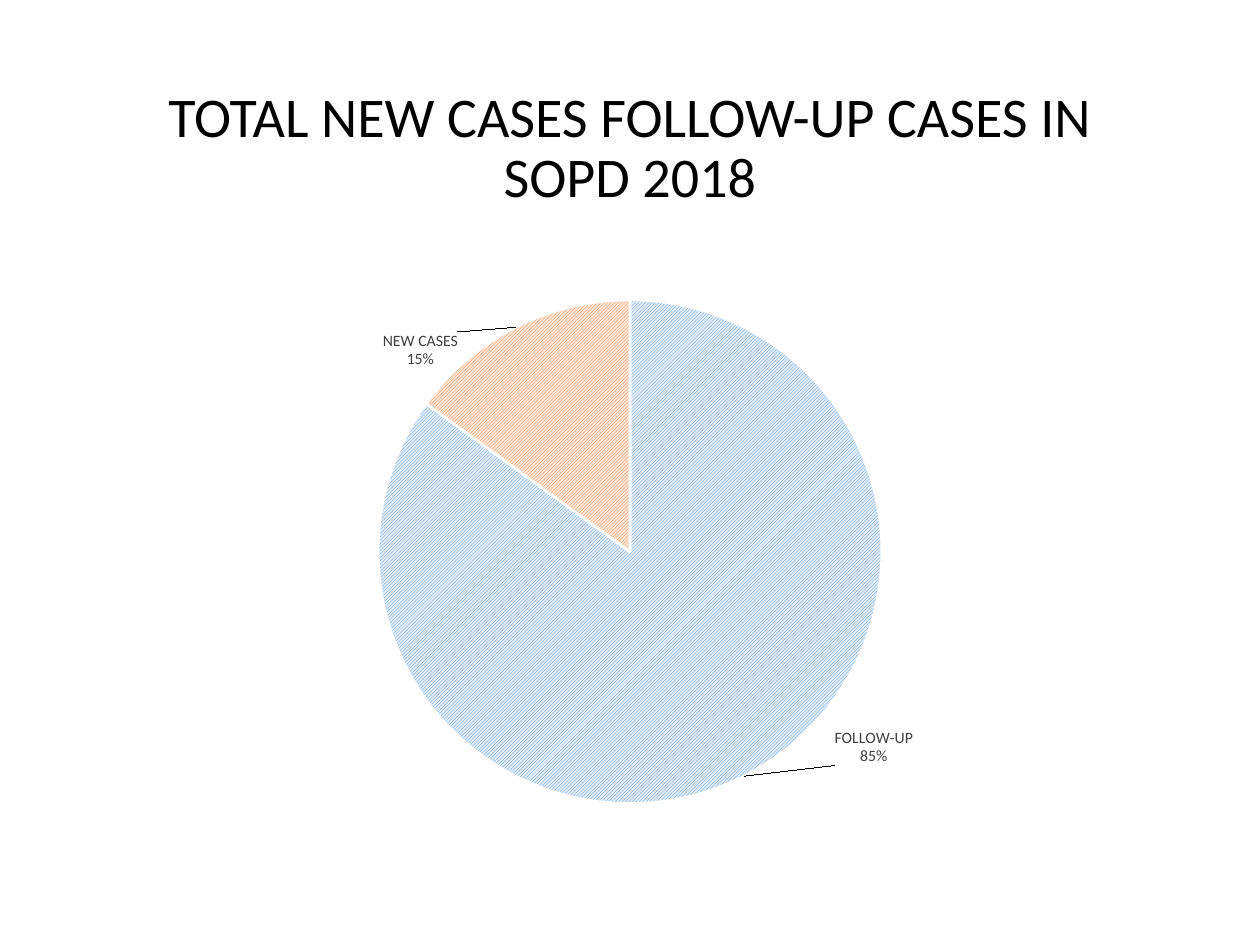
from copy import deepcopy

from lxml.etree import Element, SubElement
from pptx import Presentation
from pptx.chart.data import CategoryChartData
from pptx.dml.color import RGBColor
from pptx.enum.chart import XL_CHART_TYPE, XL_LABEL_POSITION
from pptx.enum.dml import MSO_PATTERN
from pptx.enum.text import MSO_ANCHOR, PP_ALIGN
from pptx.oxml.ns import qn
from pptx.util import Pt

FONT = "Calibri"
COLORS = {
    "text": "000000",
    "label": "404040",
    "edge": "FFFFFF",
    "follow_up": "5B9BD5",
    "follow_up_light": "DEEBF7",
    "new": "ED7D31",
    "new_light": "FBE5D6",
}
CASES = [("FOLLOW-UP", 85, "follow_up"), ("NEW CASES", 15, "new")]
LABEL_OFFSETS = [(0.08, -0.09), (-0.05, 0.08)]


def rgb(name):
    return RGBColor.from_string(COLORS[name])


def set_font(font, size, color):
    font.name = FONT
    font.size = Pt(size)
    font.color.rgb = rgb(color)


def add_title(s, x, y, w, h):
    sp = s.shapes.title
    sp.left, sp.top, sp.width, sp.height = Pt(x), Pt(y), Pt(w), Pt(h)
    tf = sp.text_frame
    tf.word_wrap = True
    tf.vertical_anchor = MSO_ANCHOR.MIDDLE
    p = tf.paragraphs[0]
    p.text = "TOTAL NEW CASES FOLLOW-UP CASES IN SOPD 2018"
    p.alignment = PP_ALIGN.CENTER
    p.line_spacing = 0.9
    set_font(p.font, 32, "text")


def add_manual_layout(layout, **settings):
    manual = SubElement(layout, qn("c:manualLayout"))
    for tag, val in settings.items():
        SubElement(manual, qn(f"c:{tag}")).set("val", str(val))


def set_plot_layout(chart, **fractions):
    area = chart.plots[0]._element.getparent()
    layout = area.find(qn("c:layout"))
    if layout is None:
        layout = SubElement(area, qn("c:layout"))
        area.insert(0, layout)
    add_manual_layout(
        layout, layoutTarget="inner", xMode="edge", yMode="edge", **fractions
    )


def style_labels(labels):
    labels.show_value = False
    labels.show_category_name = True
    labels.show_percentage = True
    labels.position = XL_LABEL_POSITION.OUTSIDE_END
    set_font(labels.font, 9, "label")
    separator = Element(qn("c:separator"))
    separator.text = "\n"
    labels._element.find(qn("c:showBubbleSize")).addnext(separator)


def shift_labels(labels, offsets):
    shared = [c for c in labels._element if c.tag != qn("c:showLeaderLines")]
    for i, (dx, dy) in enumerate(offsets):
        label = Element(qn("c:dLbl"))
        SubElement(label, qn("c:idx")).set("val", str(i))
        add_manual_layout(SubElement(label, qn("c:layout")), x=dx, y=dy)
        label.extend(deepcopy(shared))
        labels._element.insert(i, label)


def add_cases_pie(s, x, y, w, h):
    data = CategoryChartData()
    data.categories = [name for name, _, _ in CASES]
    data.add_series("Series 1", [value for _, value, _ in CASES])
    chart = s.shapes.add_chart(
        XL_CHART_TYPE.PIE, Pt(x), Pt(y), Pt(w), Pt(h), data
    ).chart
    chart.has_title = False
    chart.has_legend = False
    set_font(chart.font, 10, "text")
    set_plot_layout(chart, x=0.26, y=0.08, w=0.48, h=0.84)
    plot = chart.plots[0]
    plot.vary_by_categories = True
    series = plot.series[0]
    for i, (_, _, color) in enumerate(CASES):
        fmt = series.points[i].format
        fmt.fill.patterned()
        fmt.fill.pattern = MSO_PATTERN.LIGHT_UPWARD_DIAGONAL
        fmt.fill.fore_color.rgb = rgb(color)
        fmt.fill.back_color.rgb = rgb(f"{color}_light")
        fmt.line.color.rgb = rgb("edge")
        fmt.line.width = Pt(1.5)
    labels = series.data_labels
    style_labels(labels)
    shift_labels(labels, LABEL_OFFSETS)


def main():
    prs = Presentation()
    prs.slide_width, prs.slide_height = Pt(720), Pt(540)
    s = prs.slides.add_slide(prs.slide_layouts[5])
    margin = 49.5
    width = 720 - 2 * margin
    add_title(s, margin, 33, width, 104.5)
    add_cases_pie(s, margin, 144, width, 342.7)
    prs.save("out.pptx")


if __name__ == "__main__":
    main()
